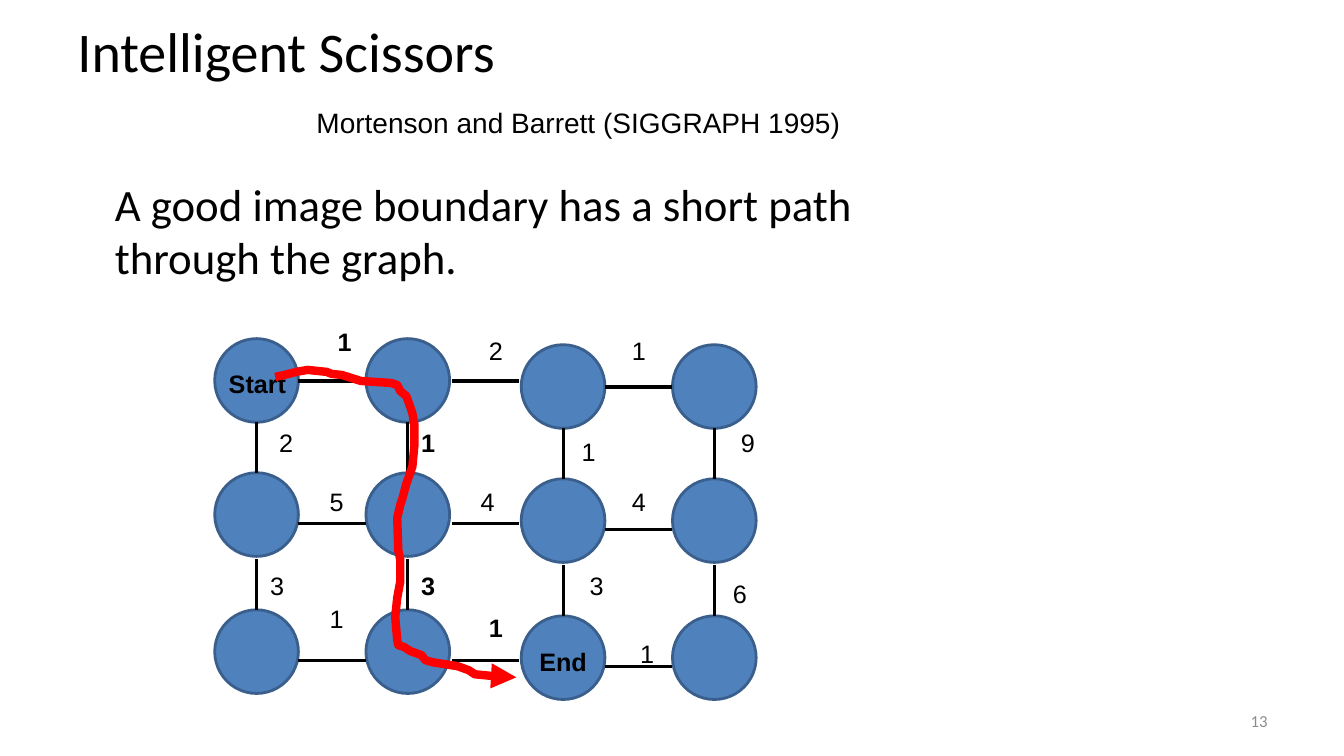
from lxml.etree import SubElement
from pptx import Presentation
from pptx.dml.color import RGBColor
from pptx.enum.shapes import MSO_CONNECTOR, MSO_SHAPE
from pptx.enum.text import MSO_ANCHOR, PP_ALIGN
from pptx.oxml.ns import qn
from pptx.util import Inches, Pt

BLACK = RGBColor(0x00, 0x00, 0x00)
GREY = RGBColor(0x8C, 0x8C, 0x8C)
BLUE = RGBColor(0x4F, 0x81, 0xBD)
DARK_BLUE = RGBColor(0x3A, 0x5F, 0x8C)
RED = RGBColor(0xFF, 0x00, 0x00)

TITLE = "Intelligent Scissors"
CITATION = "Mortenson and Barrett (SIGGRAPH 1995)"
STATEMENT = "A good image boundary has a short path through the graph."
PAGE_NUMBER = "13"

# Graph grid: the two right-hand columns sit slightly lower
NODE_SIZE = 0.83
COLUMN_LEFTS = (2.13, 3.63, 5.17, 6.67)
ROW_TOPS = (3.36, 4.69, 6.05)
RIGHT_DROP = 0.06
EDGE_LEFTS = (2.96, 4.48, 6.0)
EDGE_HEIGHTS = (3.78, 5.19, 6.55)
EDGE_WIDTH = 0.67
EDGE_DROP = 0.5

# text, left, top, width
PATH_LABELS = [
    ("1", 3.25, 3.19, 0.34), ("1", 4.08, 4.19, 0.34),
    ("3", 4.08, 5.61, 0.34), ("1", 4.75, 6.03, 0.34),
    ("Start", 2.17, 3.61, 0.78), ("End", 5.25, 6.36, 0.68),
]
OTHER_LABELS = [
    ("2", 4.75, 3.28, 0.34), ("1", 6.17, 3.28, 0.34),
    ("2", 2.67, 4.19, 0.34), ("1", 5.67, 4.28, 0.34), ("9", 7.25, 4.19, 0.34),
    ("5", 3.17, 4.78, 0.34), ("4", 4.67, 4.78, 0.34), ("4", 6.17, 4.78, 0.34),
    ("3", 2.58, 5.61, 0.34), ("3", 5.75, 5.61, 0.34), ("6", 7.17, 5.69, 0.34),
    ("1", 3.17, 5.94, 0.34), ("1", 6.25, 6.28, 0.34),
]
# Freeform coordinates are whole numbers, so the path is in hundredths of an inch
PATH_UNITS_PER_INCH = 100
SHORT_PATH = [
    (273, 374), (282, 372), (294, 369), (305, 367), (324, 369),
    (329, 371), (339, 372), (358, 378), (388, 380), (394, 382),
    (397, 388), (403, 393), (407, 404), (409, 410), (411, 421),
    (411, 442), (409, 463), (403, 480), (399, 495), (397, 501),
    (394, 514), (395, 546), (397, 555), (397, 577), (394, 593),
    (392, 612), (394, 635), (395, 640), (401, 642), (407, 646),
    (418, 650), (422, 655), (429, 657), (454, 661), (465, 665),
    (471, 669), (492, 671), (507, 674), (512, 672),
]


def add_text(page, text, left, top, width, height, size=18, font="Arial",
             color=BLACK, bold=False, wrap=False, anchor=MSO_ANCHOR.TOP,
             align=PP_ALIGN.LEFT):
    box = page.shapes.add_textbox(Inches(left), Inches(top), Inches(width), Inches(height))
    frame = box.text_frame
    frame.word_wrap = wrap
    frame.vertical_anchor = anchor
    para = frame.paragraphs[0]
    para.alignment = align
    span = para.add_run()
    span.text = text
    span.font.size = Pt(size)
    span.font.name = font
    span.font.bold = bold
    span.font.color.rgb = color


def add_edge(page, left, top, right, bottom):
    edge = page.shapes.add_connector(MSO_CONNECTOR.STRAIGHT, Inches(left), Inches(top),
                                     Inches(right), Inches(bottom))
    edge.line.color.rgb = BLACK
    edge.line.width = Pt(2.25)
    SubElement(edge._element.spPr, qn("a:effectLst"))


def add_node(page, left, top):
    node = page.shapes.add_shape(MSO_SHAPE.OVAL, Inches(left), Inches(top),
                                 Inches(NODE_SIZE), Inches(NODE_SIZE))
    node.shadow.inherit = False
    node.fill.solid()
    node.fill.fore_color.rgb = BLUE
    node.line.color.rgb = DARK_BLUE
    node.line.width = Pt(2)


def add_graph(page):
    for row, top in enumerate(ROW_TOPS):
        for column, left in enumerate(COLUMN_LEFTS):
            node_top = top + (RIGHT_DROP if column >= 2 else 0)
            add_node(page, left, node_top)
            if row > 0:
                middle = left + NODE_SIZE / 2
                add_edge(page, middle, node_top - EDGE_DROP, middle, node_top)
    for height in EDGE_HEIGHTS:
        for gap, left in enumerate(EDGE_LEFTS):
            level = height + (RIGHT_DROP if gap == 2 else 0)
            add_edge(page, left, level, left + EDGE_WIDTH, level)


def add_short_path(page):
    builder = page.shapes.build_freeform(*SHORT_PATH[0],
                                         scale=Inches(1) / PATH_UNITS_PER_INCH)
    builder.add_line_segments(SHORT_PATH[1:], close=False)
    curve = builder.convert_to_shape()
    curve.shadow.inherit = False
    curve.fill.background()
    curve.line.color.rgb = RED
    curve.line.width = Pt(6)
    outline = curve.line._get_or_add_ln()
    SubElement(outline, qn("a:round"))
    SubElement(outline, qn("a:tailEnd"), type="triangle")


def main():
    deck = Presentation()
    deck.slide_width, deck.slide_height = Inches(13.33), Inches(7.5)
    page = deck.slides.add_slide(deck.slide_layouts[6])

    add_text(page, TITLE, 0.67, 0, 12, 1, size=40, font="Calibri", wrap=True,
             anchor=MSO_ANCHOR.MIDDLE)
    add_text(page, STATEMENT, 1.04, 1.7, 8.88, 5, size=32, font="Calibri", wrap=True)
    add_text(page, CITATION, 3.04, 1, 5.43, 0.44, size=20)
    add_graph(page)
    for labels, bold in ((OTHER_LABELS, False), (PATH_LABELS, True)):
        for text, left, top, width in labels:
            add_text(page, text, left, top, width, 0.4, bold=bold)
    add_short_path(page)
    add_text(page, PAGE_NUMBER, 9.56, 6.95, 3.11, 0.4, size=12, font="Calibri",
             color=GREY, wrap=True, anchor=MSO_ANCHOR.MIDDLE, align=PP_ALIGN.RIGHT)
    deck.save("out.pptx")


if __name__ == "__main__":
    main()
